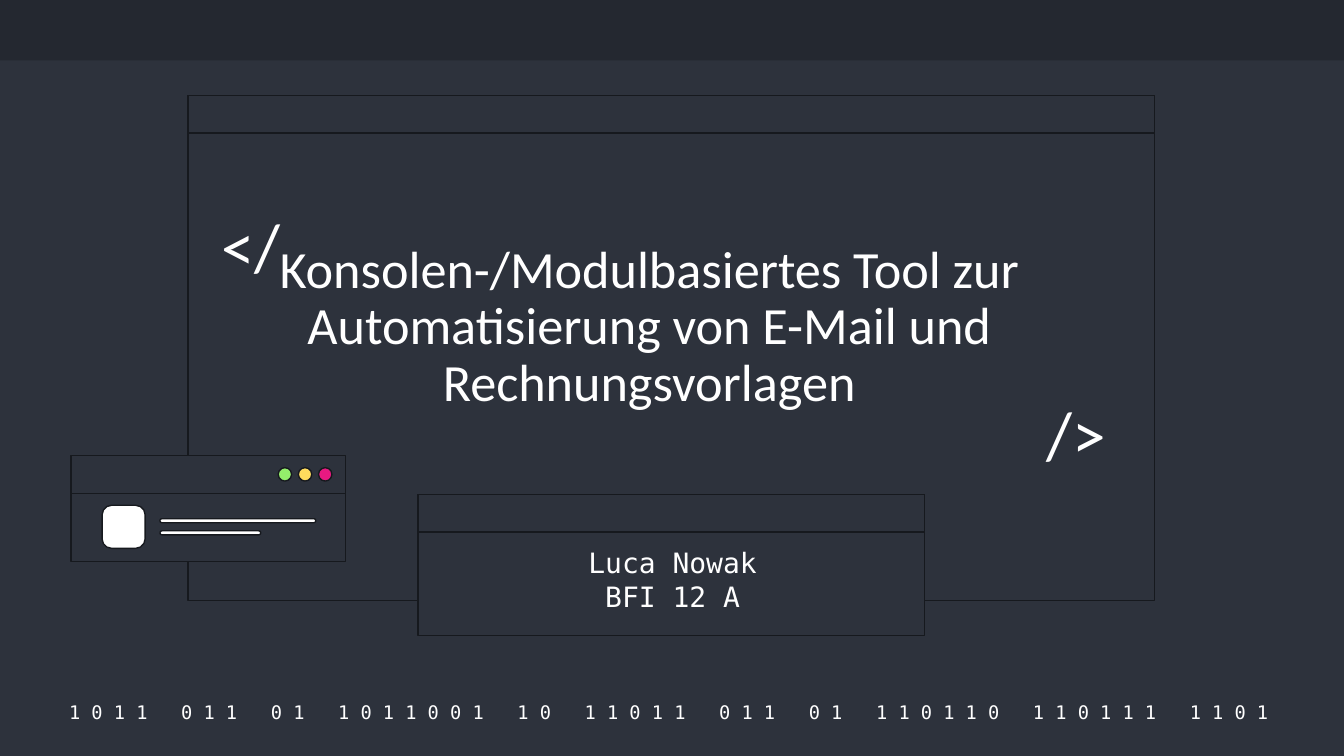
import pptx
import pptx.dml.color
import pptx.enum.shapes
import pptx.enum.text
import pptx.util

Inches = pptx.util.Inches
RGBColor = pptx.dml.color.RGBColor
Kind = pptx.enum.shapes.MSO_SHAPE
Align = pptx.enum.text.PP_ALIGN
Anchor = pptx.enum.text.MSO_ANCHOR

SLATE = RGBColor(0x2D, 0x32, 0x3C)
DARK = RGBColor(0x24, 0x28, 0x30)
EDGE = RGBColor(0x16, 0x19, 0x1E)
WHITE = RGBColor(0xFF, 0xFF, 0xFF)
GREEN = RGBColor(0x94, 0xEE, 0x6B)
YELLOW = RGBColor(0xFF, 0xDB, 0x5D)
PINK = RGBColor(0xE8, 0x19, 0x81)

SANS = "Calibri"
MONO = "DejaVu Sans Mono"

# Widescreen slide, 16 to 9
deck = pptx.Presentation()
deck.slide_width = Inches(10)
deck.slide_height = Inches(10) * 9 // 16
slide = deck.slides.add_slide(deck.slide_layouts[6])
slide.background.fill.solid()
slide.background.fill.fore_color.rgb = SLATE


def draw(kind, left, top, width, height, fill, edge=EDGE):
    shape = slide.shapes.add_shape(
        kind, Inches(left), Inches(top), Inches(width), Inches(height))
    shape.shadow.inherit = False
    shape.fill.solid()
    shape.fill.fore_color.rgb = fill
    if edge is None:
        shape.line.fill.background()
    else:
        shape.line.color.rgb = edge
        shape.line.width = pptx.util.Pt(0.75)
    return shape


def write(left, top, width, height, lines, font, size,
          align=Align.CENTER, anchor=Anchor.MIDDLE, space=None):
    """Add a text box; each line is a list of runs."""
    box = slide.shapes.add_textbox(
        Inches(left), Inches(top), Inches(width), Inches(height))
    frame = box.text_frame
    frame.word_wrap = True
    frame.vertical_anchor = anchor
    frame.margin_left = frame.margin_right = Inches(0.1)
    frame.margin_top = frame.margin_bottom = Inches(0.1)
    for i, line in enumerate(lines):
        para = frame.add_paragraph() if i else frame.paragraphs[0]
        para.alignment = align
        para.line_spacing = space
        for text in line:
            run = para.add_run()
            run.text = text
            run.font.name = font
            run.font.size = pptx.util.Pt(size)
            run.font.color.rgb = WHITE
    return box


# Top band
draw(Kind.RECTANGLE, 0, 0, 10, 0.45, DARK, None)

# Binary footer: the space between groups is as wide as three
groups = ["1011", "011", "01", "1011001", "10", "11011",
          "011", "01", "110110", "110111", "1101"]
runs = [" ".join(groups[0])]
for group in groups[1:]:
    runs += [" ", " ".join(group)]
foot = write(0.34, 5.2, 9.27, 0.2, [runs], MONO, 10)
for run in foot.text_frame.paragraphs[0].runs:
    if run.text == " ":
        run.font._element.set("spc", "1204")

# Large and middle windows, each with a title bar
BAR = 0.28
for left, top, width, height in [(1.4, 0.71, 7.19, 3.76),
                                 (3.11, 3.68, 3.77, 1.05)]:
    for high in (height, BAR):
        draw(Kind.RECTANGLE, left, top, width, high, SLATE)

# Code brackets
for text, left, top in [("</", 1.55, 1.53), ("/>", 7.69, 2.93)]:
    write(left, top, 0.77, 0.66, [[text]], SANS, 36, Align.LEFT, space=0.9)

# Title and author
title = ("Konsolen-/Modulbasiertes Tool zur Automatisierung "
         "von E-Mail und Rechnungsvorlagen")
write(1.87, 1.28, 5.92, 1.89, [[title]], SANS, 28,
      anchor=Anchor.BOTTOM, space=0.9)
write(3.34, 3.96, 3.33, 0.78, [["Luca Nowak"], ["BFI 12 A"]], MONO, 15,
      anchor=Anchor.TOP)

# Small window with icon and text lines
draw(Kind.RECTANGLE, 0.53, 3.67, 2.04, 0.51, SLATE)
draw(Kind.RECTANGLE, 0.53, 3.39, 2.04, BAR, SLATE)
for left, top, width, height, bend in [(0.76, 3.76, 0.32, 0.32, 0.22),
                                       (1.19, 3.86, 1.16, 0.03, 0.5),
                                       (1.19, 3.95, 0.75, 0.03, 0.5)]:
    shape = draw(Kind.ROUNDED_RECTANGLE, left, top, width, height, WHITE)
    shape.adjustments[0] = bend

# Window buttons
for i, color in enumerate([GREEN, YELLOW, PINK]):
    draw(Kind.OVAL, 2.07 + 0.15 * i, 3.48, 0.1, 0.1, color)

deck.save("out.pptx")
